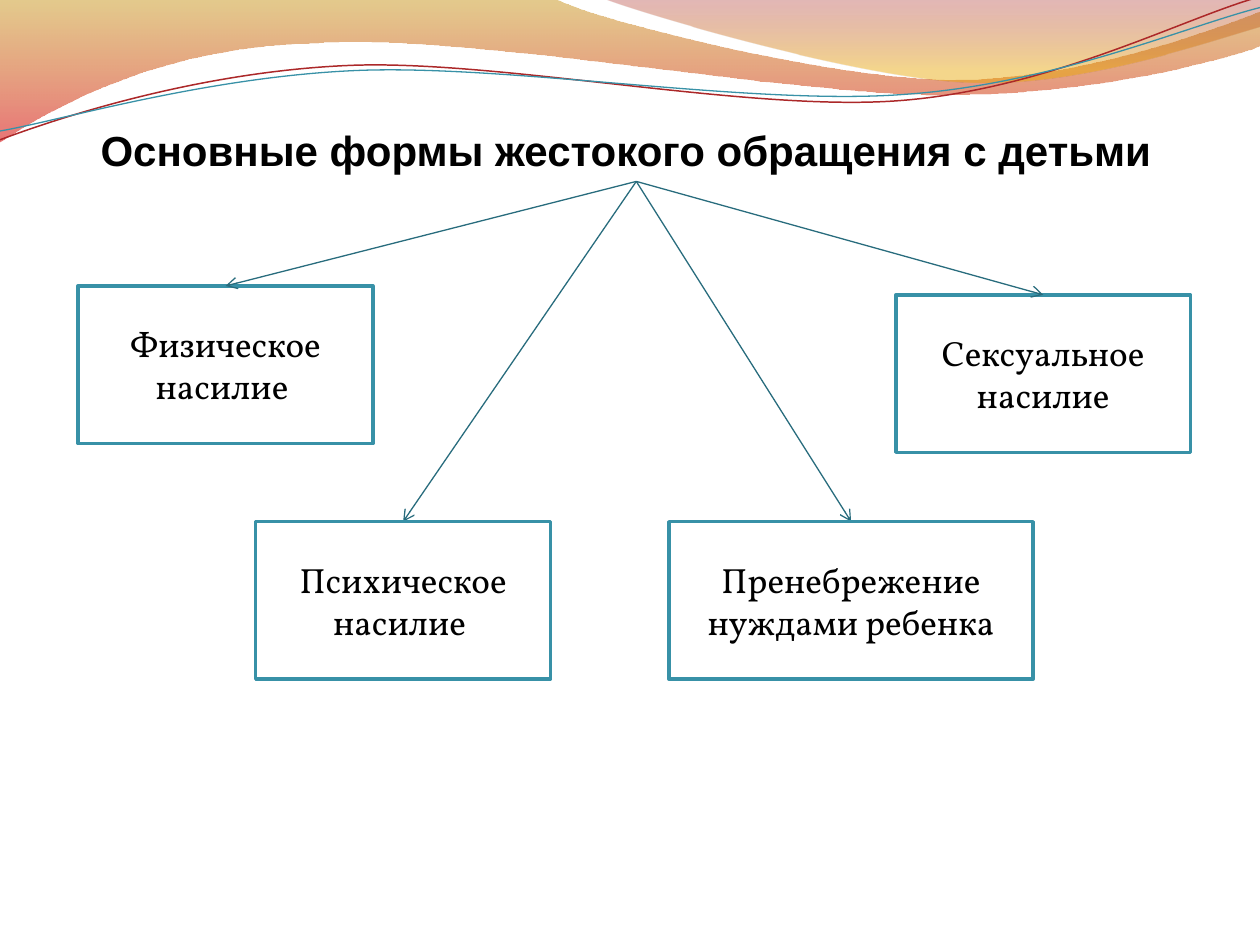
from lxml import etree
from pptx import Presentation
from pptx.dml.color import RGBColor
from pptx.enum.shapes import MSO_CONNECTOR, MSO_SHAPE
from pptx.enum.text import MSO_ANCHOR, MSO_AUTO_SIZE, PP_ALIGN
from pptx.oxml.ns import qn
from pptx.util import Inches, Pt

STRAIGHT = MSO_CONNECTOR.STRAIGHT
RECTANGLE = MSO_SHAPE.RECTANGLE
MIDDLE = MSO_ANCHOR.MIDDLE
CENTER = PP_ALIGN.CENTER
FIT_SHAPE = MSO_AUTO_SIZE.SHAPE_TO_FIT_TEXT

BLACK = RGBColor(0x00, 0x00, 0x00)
WHITE = RGBColor(0xFF, 0xFF, 0xFF)
TEAL = RGBColor(0x38, 0x91, 0xA7)
DARK_TEAL = RGBColor(0x28, 0x6C, 0x7D)
RED = RGBColor(0xAC, 0x28, 0x29)
GOLD = RGBColor(0xC3, 0x8B, 0x00)
SCARLET = RGBColor(0xD6, 0x03, 0x05)
MAROON = RGBColor(0xA1, 0x11, 0x12)
AMBER = RGBColor(0xE9, 0xA6, 0x00)

FORM_HEIGHT = 1.25

WIDE_BAND = [
    (0, 0), (4.4, -0.01),
    (4.76, 0.17, 6.64, 0.63, 7.58, 0.63), (8.53, 0.63, 9.58, 0.26, 10, 0.09),
    (10.01, 0.36),
    (9.83, 0.44, 8.7, 0.76, 7.46, 0.75), (6.22, 0.75, 3.82, 0.28, 2.57, 0.34),
    (1.29, 0.36, 0.46, 0.83, -0.01, 1.13),
]
RIGHT_BAND = [
    (4.79, -0.01),
    (5.09, 0.11, 6.82, 0.62, 7.69, 0.65), (8.56, 0.69, 9.61, 0.32, 10, 0.21),
    (10, 0),
]
RED_WAVE = [
    (0, 1.11),
    (0.48, 0.93, 1.58, 0.57, 2.77, 0.52), (3.95, 0.47, 5.93, 0.89, 7.13, 0.8),
    (8.33, 0.71, 9.38, 0.15, 9.98, -0.02),
]
TEAL_WAVE = [
    (0, 1.04),
    (0.47, 0.96, 1.64, 0.61, 2.83, 0.56), (4.03, 0.51, 5.97, 0.84, 7.17, 0.75),
    (8.36, 0.67, 9.41, 0.21, 10, 0.06),
]

PHYSICAL = ("Физическое насилие ", 0.62, 2.27, 2.34)
NEGLECT = ("Пренебрежение нуждами ребенка", 5.31, 4.14, 2.89)
MENTAL = ("Психическое насилие ", 2.03, 4.14, 2.34)
SEXUAL = ("Сексуальное насилие", 7.11, 2.34, 2.34)


def bend_curves(shape, segments):
    lines = list(shape.element.spPr.iter(qn("a:lnTo")))
    for segment in segments[1:]:
        count = len(segment) // 2
        group, lines = lines[:count], lines[count:]
        if count == 3:
            curve = etree.Element(qn("a:cubicBezTo"))
            group[0].addprevious(curve)
            for line in group:
                curve.append(line[0])
                line.getparent().remove(line)


def add_outline(slide, left, top, segments, close):
    corners = [
        (Inches(left + segment[i]), Inches(top + segment[i + 1]))
        for segment in segments for i in range(0, len(segment), 2)
    ]
    builder = slide.shapes.build_freeform(*corners[0])
    builder.add_line_segments(corners[1:], close=close)
    shape = builder.convert_to_shape()
    bend_curves(shape, segments)
    shape.shadow.inherit = False
    return shape


def add_band(slide, left, top, segments, stops):
    shape = add_outline(slide, left, top, segments, True)
    shape.line.fill.background()
    shape.fill.gradient()
    shape.fill.gradient_angle = 270
    for stop, (position, color, _) in zip(shape.fill.gradient_stops, stops):
        stop.position = position
        stop.color.rgb = color
    color_elements = list(shape.element.spPr.iter(qn("a:srgbClr")))
    for element, (_, _, opacity) in zip(color_elements, stops):
        etree.SubElement(element, qn("a:alpha"), val=str(opacity * 1000))


def add_wave(slide, left, top, segments, color, width):
    shape = add_outline(slide, left, top, segments, False)
    shape.fill.background()
    shape.line.color.rgb = color
    shape.line.width = Pt(width)


def add_header(slide, left, top):
    add_band(slide, left, top, WIDE_BAND, [(0, GOLD, 45), (1, SCARLET, 55)])
    add_band(slide, left, top, RIGHT_BAND, [(0, MAROON, 30), (0.8, AMBER, 45)])
    add_wave(slide, left, top, RED_WAVE, RED, 0.85)
    add_wave(slide, left, top, TEAL_WAVE, TEAL, 0.75)


def add_run(paragraph, text, font_name, size, bold=False):
    run = paragraph.add_run()
    run.text = text
    run.font.name = font_name
    run.font.size = Pt(size)
    run.font.bold = bold
    run.font.color.rgb = BLACK


def add_title(slide, left, top, width, height):
    box = slide.shapes.add_textbox(Inches(left), Inches(top), Inches(width), Inches(height))
    frame = box.text_frame
    frame.word_wrap = False
    frame.auto_size = FIT_SHAPE
    add_run(frame.paragraphs[0], "Основные формы жестокого обращения с детьми", "Arial", 24, True)


def add_form(slide, left, top, form):
    text, x, y, width = form
    shape = slide.shapes.add_shape(
        RECTANGLE, Inches(left + x), Inches(top + y), Inches(width), Inches(FORM_HEIGHT))
    shape.shadow.inherit = False
    shape.fill.solid()
    shape.fill.fore_color.rgb = WHITE
    shape.line.color.rgb = TEAL
    shape.line.width = Pt(2)
    frame = shape.text_frame
    frame.word_wrap = True
    frame.vertical_anchor = MIDDLE
    paragraph = frame.paragraphs[0]
    paragraph.alignment = CENTER
    add_run(paragraph, text, "Vollkorn", 20)


def add_arrow(slide, left, top, form):
    _, x, y, width = form
    arrow = slide.shapes.add_connector(
        STRAIGHT, Inches(left + 5.05), Inches(top + 1.44),
        Inches(left + x + width / 2), Inches(top + y))
    arrow.line.color.rgb = DARK_TEAL
    arrow.line.width = Pt(0.75)
    properties = arrow.element.spPr
    etree.SubElement(properties.find(qn("a:ln")), qn("a:tailEnd"), type="arrow")
    etree.SubElement(properties, qn("a:effectLst"))


def add_diagram(slide, left, top):
    for form in (MENTAL, NEGLECT):
        add_arrow(slide, left, top, form)
    add_title(slide, left + 0.7, top + 0.94, 8.7, 0.5)
    for form in (PHYSICAL, NEGLECT, MENTAL, SEXUAL):
        add_form(slide, left, top, form)
    for form in (PHYSICAL, SEXUAL):
        add_arrow(slide, left, top, form)


def main():
    presentation = Presentation()
    presentation.slide_width = Inches(10)
    presentation.slide_height = Inches(7.5)
    slide = presentation.slides.add_slide(presentation.slide_layouts[6])
    add_header(slide, 0, 0)
    add_diagram(slide, 0, 0)
    presentation.save("out.pptx")


if __name__ == "__main__":
    main()
